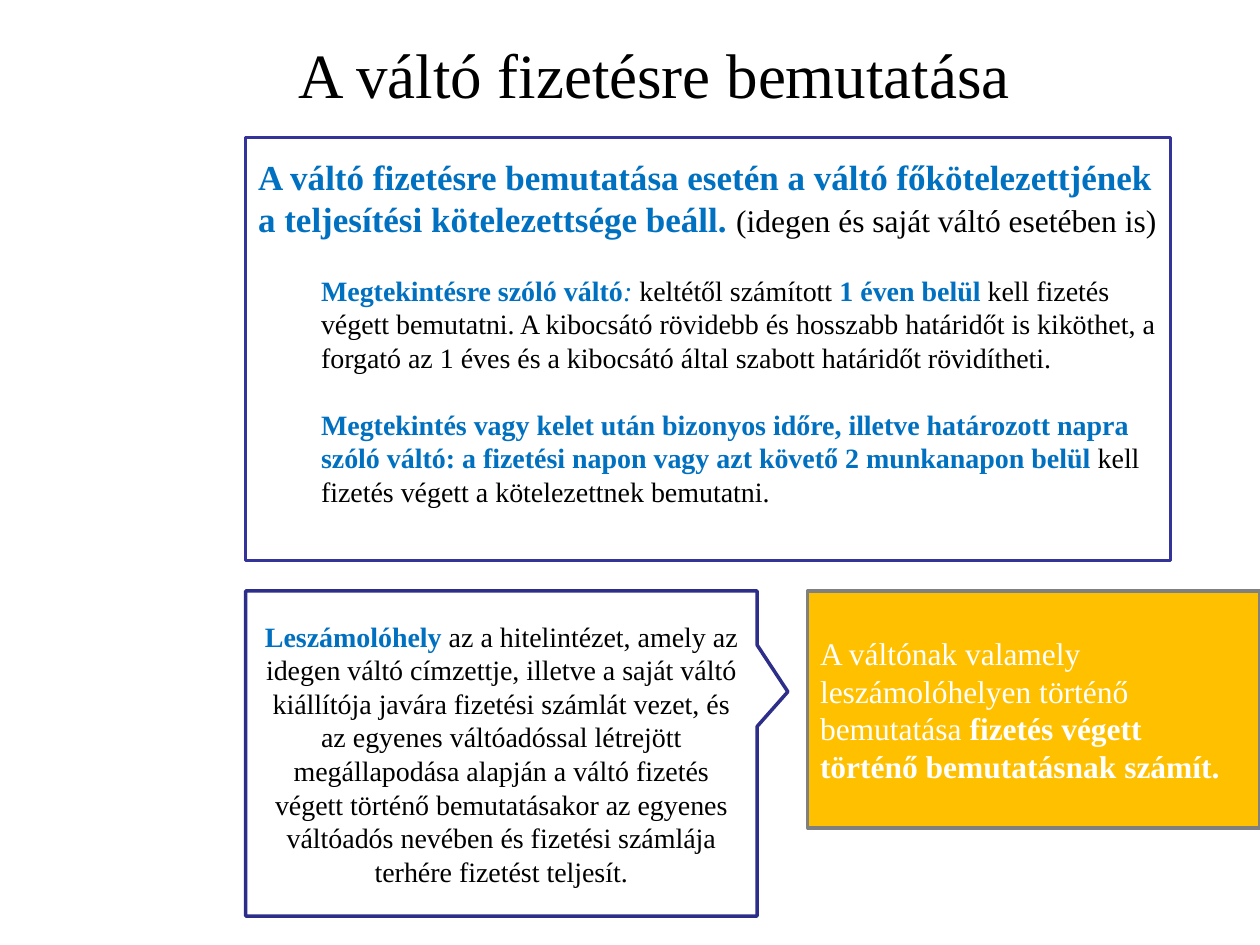
from pptx import Presentation
from pptx.dml.color import RGBColor
from pptx.enum.shapes import MSO_SHAPE
from pptx.enum.text import MSO_ANCHOR, MSO_AUTO_SIZE, PP_ALIGN
from pptx.util import Inches, Pt

RECTANGLE = MSO_SHAPE.RECTANGLE
CALLOUT = MSO_SHAPE.RECTANGULAR_CALLOUT
MIDDLE = MSO_ANCHOR.MIDDLE
FIT_SHAPE = MSO_AUTO_SIZE.SHAPE_TO_FIT_TEXT
LEFT, CENTER = PP_ALIGN.LEFT, PP_ALIGN.CENTER

BLACK = RGBColor(0x00, 0x00, 0x00)
WHITE = RGBColor(0xFF, 0xFF, 0xFF)
BLUE = RGBColor(0x00, 0x70, 0xC0)
INDIGO = RGBColor(0x33, 0x33, 0x99)
NAVY = RGBColor(0x2D, 0x2D, 0x8A)
AMBER = RGBColor(0xFF, 0xC0, 0x00)
GRAY = RGBColor(0x80, 0x80, 0x80)

FONT = "Times New Roman"
PANEL_LEFT = 1.95
LOWER_TOP = 4.69


def write_paragraph(para, spans, size, align=LEFT, space_before=0, indent=0):
    para.alignment = align
    para.space_before = Pt(space_before)
    if indent:
        para.level = 1
        properties = para._p.get_or_add_pPr()
        properties.set("marL", str(Inches(indent)))
        properties.set("indent", "0")
    for text, color, changes in spans:
        span = para.add_run()
        span.text = text
        span.font.color.rgb = color
        formats = {"name": FONT, "size": Pt(size), "bold": False, "italic": False}
        for name, value in (formats | changes).items():
            setattr(span.font, name, value)


def add_panel(page, kind, box, fill, line):
    panel = page.shapes.add_shape(kind, *map(Inches, box))
    panel.shadow.inherit = False
    panel.fill.solid()
    panel.fill.fore_color.rgb = fill
    panel.line.color.rgb = line
    panel.line.width = Pt(2)
    panel.text_frame.word_wrap = True
    panel.text_frame.vertical_anchor = MIDDLE
    return panel


def add_title(page, box):
    frame = page.shapes.add_textbox(*map(Inches, box)).text_frame
    frame.word_wrap = True
    frame.auto_size = FIT_SHAPE
    write_paragraph(frame.paragraphs[0],
                    [("A váltó fizetésre bemutatása", BLACK, {})], 36)


def add_rules(page, box):
    frame = add_panel(page, RECTANGLE, box, WHITE, INDIGO).text_frame
    frame.margin_bottom = Inches(0.32)
    bold = {"bold": True}
    write_paragraph(frame.paragraphs[0], [
        ("A váltó fizetésre bemutatása esetén a váltó főkötelezettjének a "
         "teljesítési kötelezettsége beáll. ", BLUE, bold),
        ("(idegen és saját váltó esetében is)", BLACK, {"size": Pt(18)}),
    ], 20)
    details = [
        [("Megtekintésre szóló váltó", BLUE, bold),
         (": ", BLUE, {"italic": True}),
         ("keltétől számított ", BLACK, {}),
         ("1 éven belül ", BLUE, bold),
         ("kell fizetés végett bemutatni. A kibocsátó rövidebb és hosszabb "
          "határidőt is kiköthet, a forgató az 1 éves és a kibocsátó által "
          "szabott határidőt rövidítheti.", BLACK, {})],
        [("Megtekintés vagy kelet után bizonyos időre, illetve határozott "
          "napra szóló váltó: a fizetési napon vagy azt követő 2 munkanapon "
          "belül ", BLUE, bold),
         ("kell fizetés végett a kötelezettnek bemutatni.", BLACK, {})],
    ]
    for spans in details:
        write_paragraph(frame.add_paragraph(), spans, 16,
                        space_before=19, indent=0.5)


def add_consequence(page, box):
    frame = add_panel(page, RECTANGLE, box, AMBER, GRAY).text_frame
    write_paragraph(frame.paragraphs[0], [
        ("A váltónak valamely leszámolóhelyen történő bemutatása ", WHITE, {}),
        ("fizetés végett történő bemutatásnak számít.", WHITE, {"bold": True}),
    ], 18)


def add_definition(page, box):
    callout = add_panel(page, CALLOUT, box, WHITE, NAVY)
    callout.adjustments[0] = 0.56
    callout.adjustments[1] = -0.19
    write_paragraph(callout.text_frame.paragraphs[0], [
        ("Leszámolóhely", BLUE, {"bold": True}),
        (" az a hitelintézet, amely az idegen váltó címzettje, illetve a "
         "saját váltó kiállítója javára fizetési számlát vezet, és az egyenes "
         "váltóadóssal létrejött megállapodása alapján a váltó fizetés végett "
         "történő bemutatásakor az egyenes váltóadós nevében és fizetési "
         "számlája terhére fizetést teljesít.", BLACK, {}),
    ], 16, align=CENTER)


def main():
    deck = Presentation()
    deck.slide_width, deck.slide_height = Inches(10), Inches(7.5)
    page = deck.slides.add_slide(deck.slide_layouts[6])
    add_rules(page, (PANEL_LEFT, 1.09, 7.34, 3.36))
    add_title(page, (2.27, 0.23, 7.42, 0.71))
    add_consequence(page, (6.41, LOWER_TOP, 3.59, 1.88))
    add_definition(page, (PANEL_LEFT, LOWER_TOP, 4.06, 2.58))
    deck.save("out.pptx")


if __name__ == "__main__":
    main()
